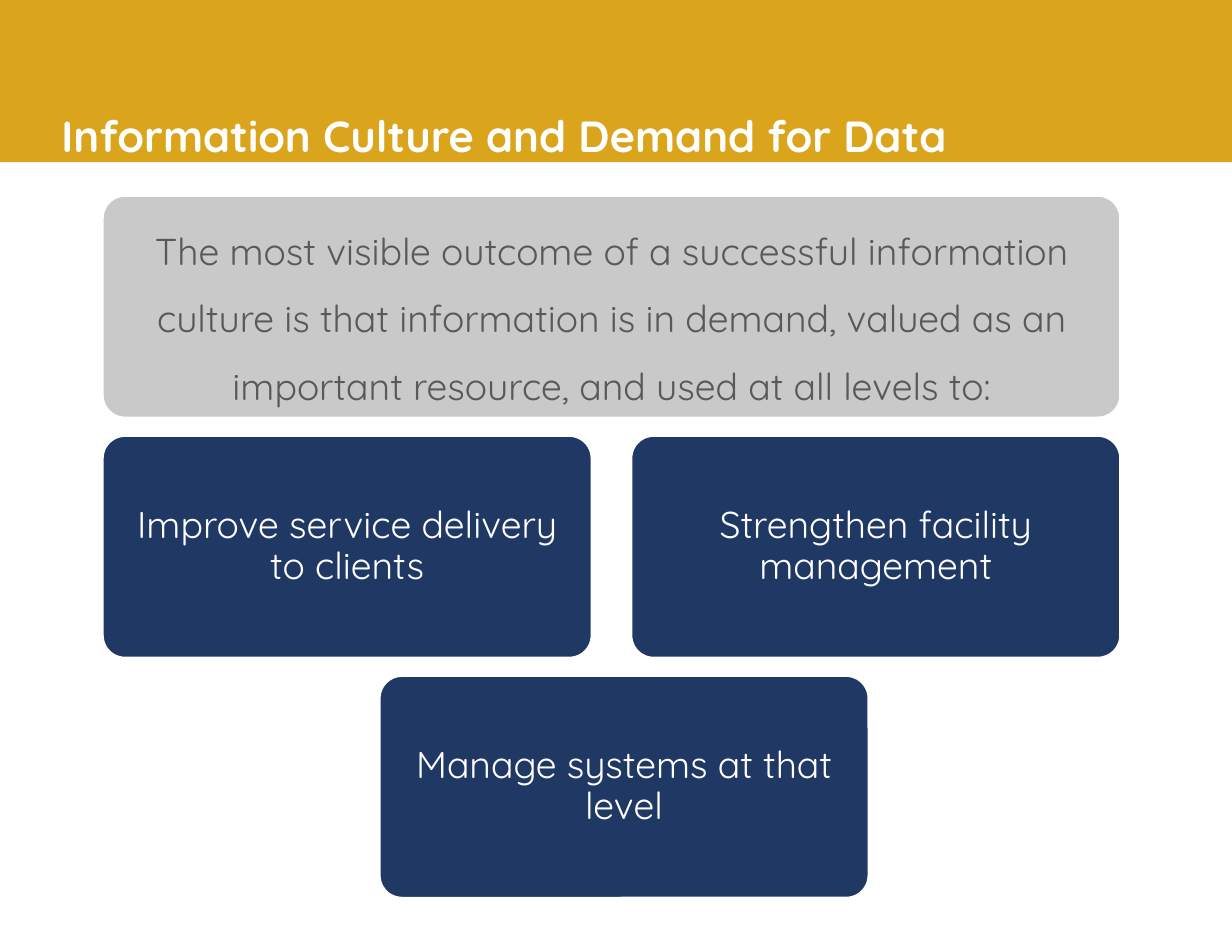
from pptx import Presentation
from pptx.dml.color import RGBColor
from pptx.enum.shapes import MSO_SHAPE
from pptx.enum.text import MSO_ANCHOR, MSO_AUTO_SIZE, PP_ALIGN
from pptx.util import Pt

RECTANGLE = MSO_SHAPE.RECTANGLE
ROUNDED = MSO_SHAPE.ROUNDED_RECTANGLE
MIDDLE = MSO_ANCHOR.MIDDLE
CENTER = PP_ALIGN.CENTER
NO_AUTOFIT = MSO_AUTO_SIZE.NONE

GOLD = RGBColor(0xDA, 0xA5, 0x1C)
GRAY = RGBColor(0xC9, 0xC9, 0xC9)
DARK_GRAY = RGBColor(0x59, 0x59, 0x59)
NAVY = RGBColor(0x20, 0x38, 0x64)
WHITE = RGBColor(0xFF, 0xFF, 0xFF)

FONT = "Quicksand"
TITLE_ONLY = 5
TITLE = "Information Culture and Demand for Data"
OUTCOME = ("The most visible outcome of a successful information culture is that "
           "information is in demand, valued as an important resource, "
           "and used at all levels to:")
USES = ["Improve service delivery to clients",
        "Strengthen facility management",
        "Manage systems at that level"]


def write(shape, wording, size, color, line_spacing, bold=False):
    frame = shape.text_frame
    frame.text = wording
    frame.word_wrap = True
    frame.auto_size = NO_AUTOFIT
    frame.vertical_anchor = MIDDLE
    paragraph = frame.paragraphs[0]
    paragraph.alignment = CENTER
    paragraph.line_spacing = line_spacing
    font = paragraph.font
    font.name, font.size, font.bold = FONT, Pt(size), bold
    font.color.rgb = color


def add_header(slide, left, top, width, height):
    band = slide.shapes.add_shape(RECTANGLE, Pt(left), Pt(top), Pt(width), Pt(height))
    band.shadow.inherit = False
    band.fill.solid()
    band.fill.fore_color.rgb = GOLD
    band.line.fill.background()

    title = slide.shapes.title
    title.left, title.top = Pt(-72), Pt(36)
    title.width, title.height = Pt(792), Pt(106.5)
    write(title, TITLE, 28, WHITE, 0.9, bold=True)
    band.element.addnext(title.element)  # title in front of the band


def add_card(slide, left, top, width, height, wording, fill, color, line_spacing=0.9):
    card = slide.shapes.add_shape(ROUNDED, Pt(left), Pt(top), Pt(width), Pt(height))
    card.adjustments[0] = 0.1
    card.shadow.inherit = False
    card.fill.solid()
    card.fill.fore_color.rgb = fill
    card.line.color.rgb = WHITE
    card.line.width = Pt(1)
    frame = card.text_frame
    frame.margin_left = frame.margin_right = Pt(7.2)
    frame.margin_top = frame.margin_bottom = Pt(7.2)
    write(card, wording, 24, color, line_spacing)


def add_outcome_diagram(slide, left, top, width, height):
    """Outcome across the top, two uses below it and the third under those."""
    row_gap = 12
    card_width = 314
    card_height = (height - 2 * row_gap) / 3
    second_row, third_row = (top + n * (card_height + row_gap) for n in (1, 2))
    add_card(slide, left, top, width, card_height, OUTCOME, GRAY, DARK_GRAY, 1.5)
    places = [(left, second_row),
              (left + width - card_width, second_row),
              (left + 178, third_row)]
    for (card_left, card_top), use in zip(places, USES):
        add_card(slide, card_left, card_top, card_width, card_height, use, NAVY, WHITE)


def main():
    prs = Presentation()
    prs.slide_width, prs.slide_height = Pt(792), Pt(612)
    slide = prs.slides.add_slide(prs.slide_layouts[TITLE_ONLY])
    add_header(slide, -11, -14, 814, 118.2)
    add_outcome_diagram(slide, 66.2, 126, 653.8, 451)
    prs.save("out.pptx")


if __name__ == "__main__":
    main()
